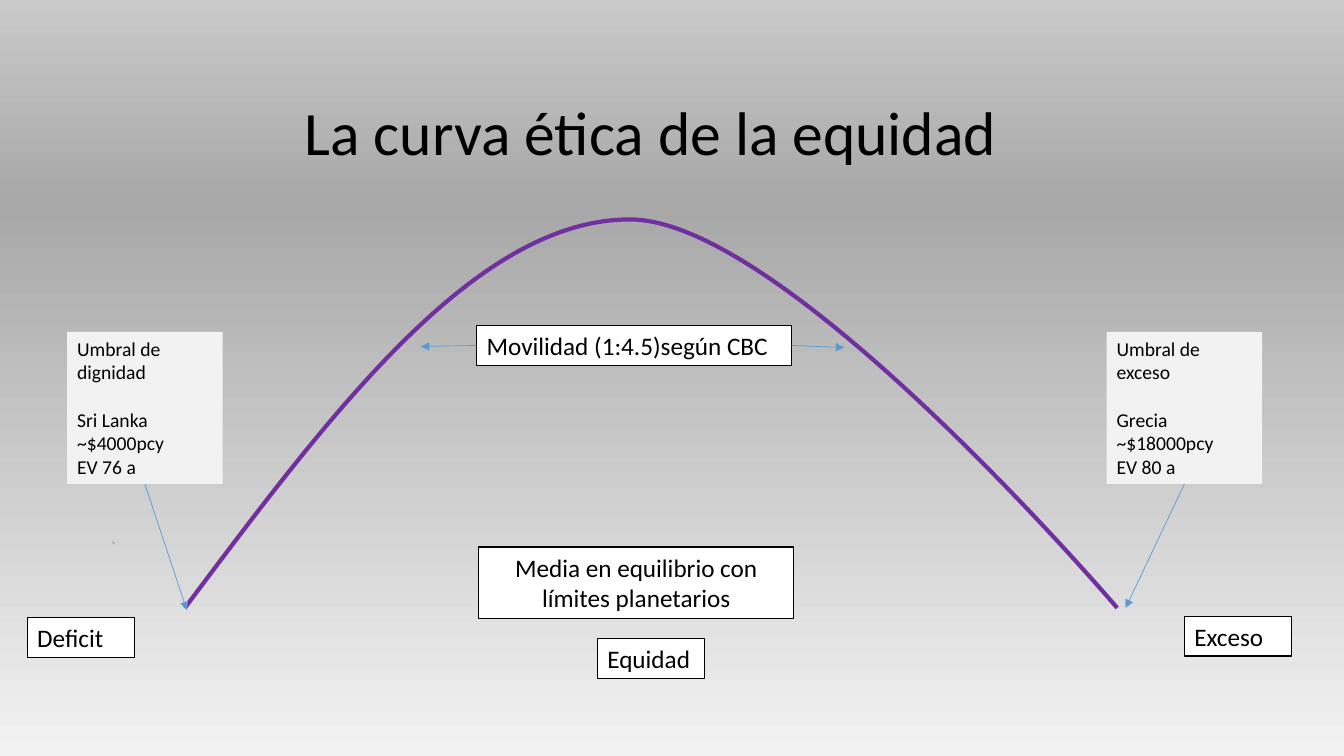
from copy import deepcopy

from lxml.etree import SubElement
from pptx import Presentation
from pptx.dml.color import RGBColor
from pptx.enum.shapes import MSO_CONNECTOR, MSO_SHAPE
from pptx.enum.text import MSO_ANCHOR, PP_ALIGN
from pptx.oxml.ns import qn
from pptx.util import Pt

PX = 9525
COLORS = {
    "ink": "000000",
    "label": "FFFFFF",
    "card": "F2F2F2",
    "curve": "7030A0",
    "arrow": "5B9BD5",
    "bottom": "F2F2F2",
    "middle": "A8A8A8",
    "top": "C9C9C9",
}


def rgb(name):
    return RGBColor.from_string(COLORS[name])


def set_line(shape, color, width):
    shape.line.color.rgb = rgb(color)
    shape.line.width = Pt(width)


def paint_background(slide):
    fill = slide.background.fill
    fill.gradient()
    fill.gradient_angle = 90
    first_stop = fill.gradient_stops[0]._gs
    first_stop.addnext(deepcopy(first_stop))
    shades = ((0, "bottom"), (0.73, "middle"), (1, "top"))
    for stop, (position, color) in zip(fill.gradient_stops, shades):
        stop.position = position
        stop.color.rgb = rgb(color)


def add_text(slide, box, text, size, align=PP_ALIGN.LEFT):
    panel = slide.shapes.add_textbox(*(n * PX for n in box))
    frame = panel.text_frame
    frame.word_wrap = True
    frame.text = text
    for paragraph in frame.paragraphs:
        paragraph.alignment = align
        font = paragraph.runs[0].font
        font.name = "Calibri"
        font.size = Pt(size)
        font.color.rgb = rgb("ink")
    return panel


def add_title(slide, box, text):
    frame = add_text(slide, box, text, 44, PP_ALIGN.CENTER).text_frame
    frame.vertical_anchor = MSO_ANCHOR.MIDDLE
    frame.paragraphs[0].line_spacing = 0.9


def add_label(slide, box, text, align=PP_ALIGN.LEFT):
    label = add_text(slide, box, text, 18, align)
    label.fill.solid()
    label.fill.fore_color.rgb = rgb("label")
    set_line(label, "ink", 1)


def add_arrow(slide, start, end):
    arrow = slide.shapes.add_connector(
        MSO_CONNECTOR.STRAIGHT, *(n * PX for n in start + end))
    set_line(arrow, "arrow", 0.5)
    SubElement(arrow.line._get_or_add_ln(), qn("a:tailEnd"), type="triangle")
    SubElement(arrow._element.spPr, qn("a:effectLst"))


def add_threshold(slide, box, text, target):
    left, top, width, height = box
    card = add_text(slide, box, text, 14)
    card.fill.solid()
    card.fill.fore_color.rgb = rgb("card")
    card.text_frame.paragraphs[1].space_before = Pt(17)
    add_arrow(slide, (left + width // 2, top + height), target)


def add_mobility(slide, box, text, reach):
    left, top, width, height = box
    middle = top + height // 2
    add_label(slide, box, text)
    add_arrow(slide, (left + width, middle), (left + width + reach, middle + 2))
    add_arrow(slide, (left, middle), (left - reach - 3, middle + 1))


def add_curve(slide, box):
    left, top, width, height = box
    right, bottom = left + width, top + height
    peak = left + 424
    points = [
        (left + 138, top + 186), (left + 276, top), (peak, top),
        (peak + 149, top), (right, bottom), (right, bottom),
    ]
    builder = slide.shapes.build_freeform(left, bottom, scale=PX)
    builder.add_line_segments(points, close=False)
    curve = builder.convert_to_shape()
    curve.shadow.inherit = False
    curve.fill.background()
    set_line(curve, "curve", 3)
    outline = next(curve._element.iter(qn("a:path")))
    segments = outline.findall(qn("a:lnTo"))
    for first in range(0, len(segments), 3):
        bezier = SubElement(outline, qn("a:cubicBezTo"))
        for segment in segments[first:first + 3]:
            bezier.append(segment[0])
            outline.remove(segment)


def add_small_arc(slide, box):
    arc = slide.shapes.add_shape(MSO_SHAPE.ARC, *(n * PX for n in box))
    arc.shadow.inherit = False
    arc.fill.background()
    set_line(arc, "arrow", 0.5)


def main():
    deck = Presentation()
    deck.slide_width, deck.slide_height = 1280 * PX, 720 * PX
    slide = deck.slides.add_slide(deck.slide_layouts[6])
    paint_background(slide)
    add_title(slide, (44, 89, 1152, 81), "La curva ética de la equidad")
    for left, top, text in (
        (26, 588, "Deficit"), (569, 608, "Equidad"), (1128, 587, "Exceso"),
    ):
        add_label(slide, (left, top, 102, 38), text)
    add_small_arc(slide, (104, 516, 5, 5))
    add_curve(slide, (176, 209, 888, 370))
    for left, text, target in (
        (64, "Umbral de dignidad\nSri Lanka ~$4000pcy\nEV 76 a", (178, 581)),
        (1054, "Umbral de exceso\nGrecia ~$18000pcy\nEV 80 a", (1072, 579)),
    ):
        add_threshold(slide, (left, 316, 148, 145), text, target)
    add_mobility(slide, (454, 310, 300, 38), "Movilidad (1:4.5)según CBC", 50)
    add_label(slide, (456, 521, 300, 68),
              "Media en equilibrio con límites planetarios", PP_ALIGN.CENTER)
    deck.save("out.pptx")


if __name__ == "__main__":
    main()
